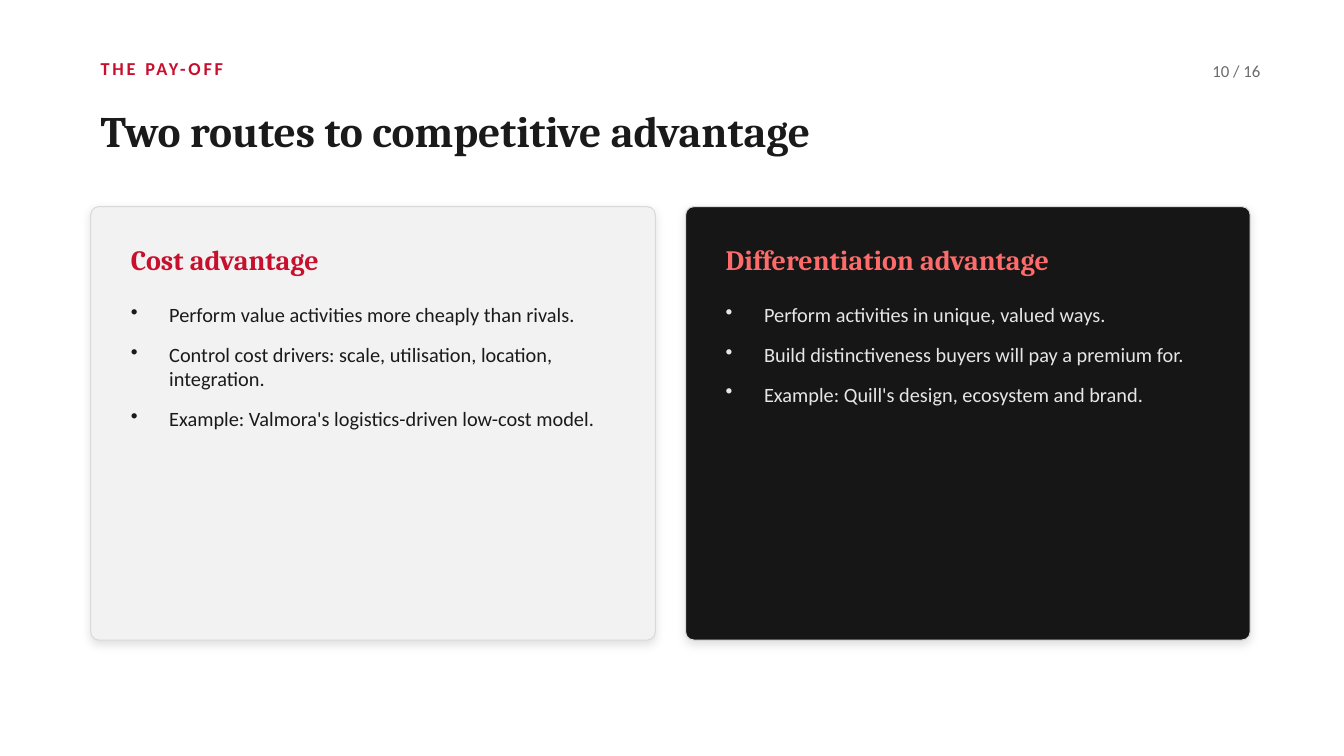
from lxml import etree
from pptx import Presentation
from pptx.dml.color import RGBColor
from pptx.enum.shapes import MSO_SHAPE as Shape
from pptx.enum.text import MSO_ANCHOR as Anchor, PP_ALIGN as Align
from pptx.oxml import parse_xml
from pptx.oxml.ns import nsdecls, qn
from pptx.util import Pt

PX = 9144
RED, INK = "C8102E", "1A1A1A"


def color(hex_code):
    return RGBColor.from_string(hex_code)


def write(lines, x, y, w, h, size, ink, font="Calibri", bold=False,
          spacing=0, align=Align.LEFT, anchor=Anchor.MIDDLE, bullet=None, gap=0):
    frame = slide.shapes.add_textbox(x * PX, y * PX, w * PX, h * PX).text_frame
    frame.word_wrap = True
    frame.vertical_anchor = anchor
    for index, line in enumerate(lines):
        paragraph = frame.add_paragraph() if index else frame.paragraphs[0]
        paragraph.alignment = align
        if bullet:
            props = paragraph._p.get_or_add_pPr()
            props.set("marL", str(38 * PX))
            props.set("indent", str(-38 * PX))
            etree.SubElement(props, qn("a:buChar"), char=bullet)
        if gap:
            paragraph.space_after = Pt(gap)
        run = paragraph.add_run()
        run.text = line
        run.font.name = font
        run.font.size = Pt(size)
        run.font.bold = bold
        run.font.color.rgb = color(ink)
        if spacing:
            run._r.get_or_add_rPr().set("spc", str(spacing * 100))


deck = Presentation()
deck.slide_width, deck.slide_height = 1333 * PX, 750 * PX
slide = deck.slides.add_slide(deck.slide_layouts[6])
slide.background.fill.solid()
slide.background.fill.fore_color.rgb = color("FFFFFF")

write(["THE PAY-OFF"], 90, 48, 900, 40, 13, RED, bold=True, spacing=2)
write(["Two routes to competitive advantage"], 90, 82, 1150, 95, 31, INK,
      font="Cambria", bold=True)
write(["10 / 16"], 1160, 50, 100, 40, 12, "6B6B6B", align=Align.RIGHT)

routes = [
    ("Cost advantage", "F2F2F2", RED, INK, [
        "Perform value activities more cheaply than rivals.",
        "Control cost drivers: scale, utilisation, location, integration.",
        "Example: Valmora's logistics-driven low-cost model.",
    ]),
    ("Differentiation advantage", "161616", "FF6B6B", "E6E6E6", [
        "Perform activities in unique, valued ways.",
        "Build distinctiveness buyers will pay a premium for.",
        "Example: Quill's design, ecosystem and brand.",
    ]),
]

for column, (heading, panel, heading_ink, body_ink, points) in enumerate(routes):
    left = 90 + column * 590
    card = slide.shapes.add_shape(Shape.ROUNDED_RECTANGLE,
                                  left * PX, 205 * PX, 560 * PX, 430 * PX)
    card.adjustments[0] = 0.019
    card.fill.solid()
    card.fill.fore_color.rgb = color(panel)
    card.line.color.rgb = color("D9D9D9")
    card.line.width = Pt(0.75)
    card.shadow.inherit = False
    effects = card._element.spPr.find(qn("a:effectLst"))
    effects.append(parse_xml(
        f'<a:outerShdw {nsdecls("a")} blurRad="{Pt(7)}" dist="{Pt(2)}" '
        'dir="5400000" algn="t" rotWithShape="0"><a:srgbClr val="000000">'
        '<a:alpha val="12000"/></a:srgbClr></a:outerShdw>'))
    write([heading], left + 30, 230, 500, 55, 20, heading_ink,
          font="Cambria", bold=True)
    write(points, left + 30, 295, 500, 320, 14.5, body_ink,
          anchor=Anchor.TOP, bullet="•", gap=11)

deck.save("out.pptx")
